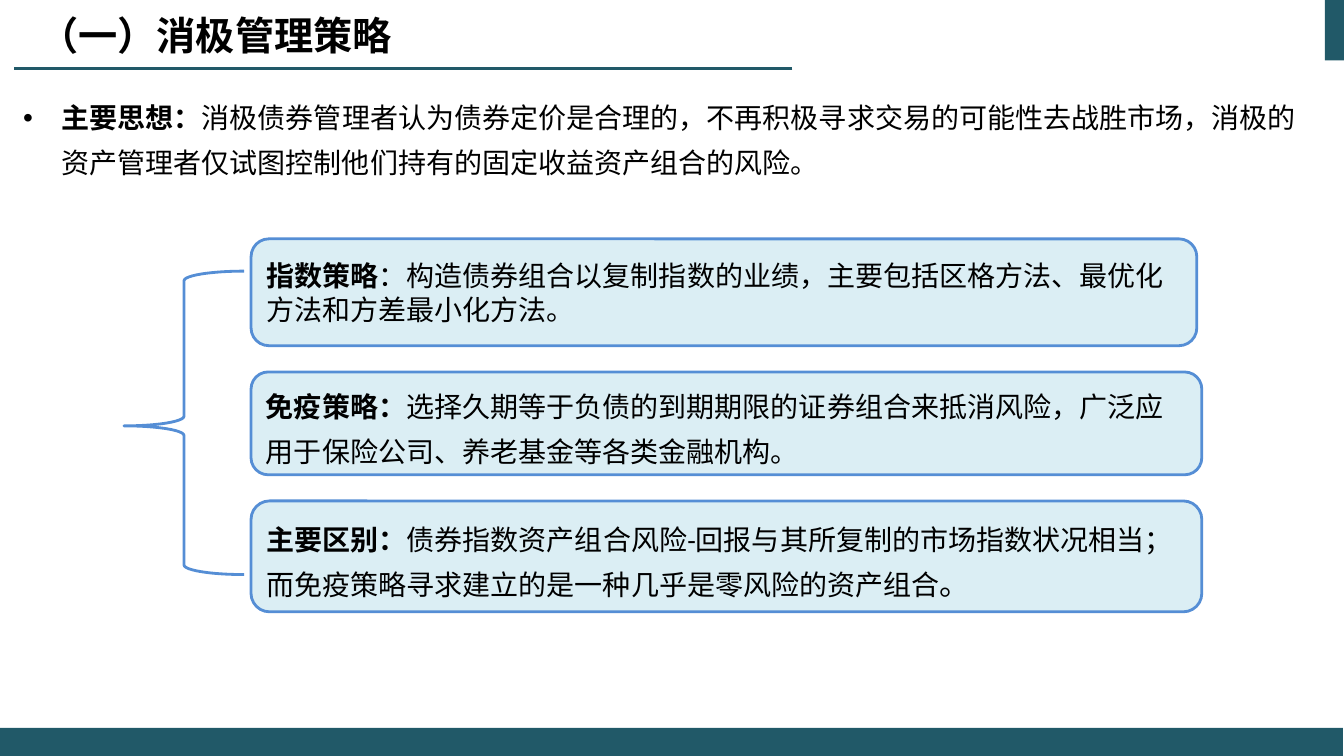
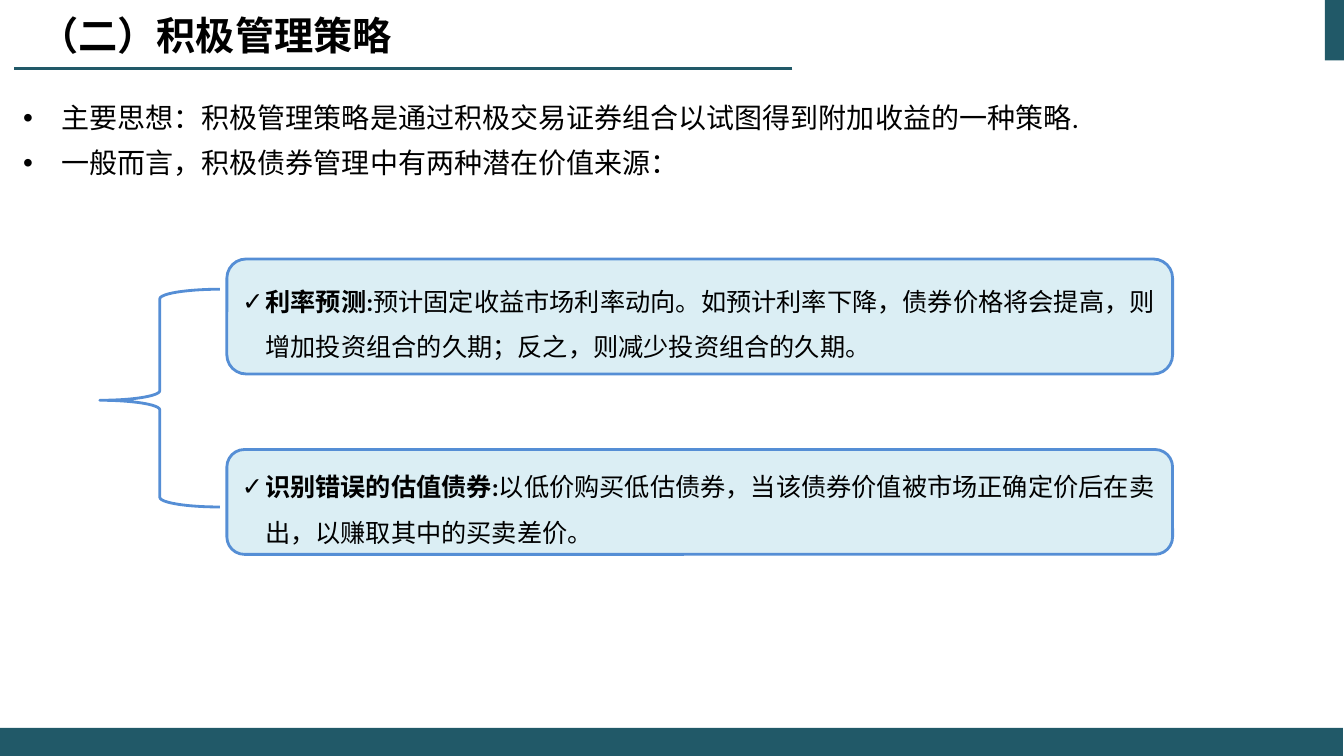
from dataclasses import dataclass

from lxml.etree import SubElement
from pptx import Presentation
from pptx.dml.color import RGBColor as RGB
from pptx.enum.shapes import MSO_CONNECTOR as CONN, MSO_SHAPE as SHP
from pptx.enum.text import MSO_ANCHOR as ANCHOR, MSO_AUTO_SIZE as AUTO, PP_ALIGN as ALIGN
from pptx.oxml.ns import qn
from pptx.util import Inches, Pt


@dataclass(frozen=True)
class Theme:
    band: RGB = RGB.from_string("215968")
    box: RGB = RGB.from_string("DBEEF4")
    edge: RGB = RGB.from_string("558ED5")
    ink: RGB = RGB.from_string("000000")
    paper: RGB = RGB.from_string("FFFFFF")
    font: str = "Calibri"
    cjk: str = "Noto Sans CJK SC"
    title: int = 28
    body: int = 20
    small: int = 18
    full_stop: int = 22


T = Theme()
EXACT = Pt(32)


def inches(*values):
    return [Inches(v) for v in values]


def place(sp, at):
    sp.left, sp.top, sp.width, sp.height = inches(*at)


def add_bullet(p, char, indent):
    pPr = p._p.get_or_add_pPr()
    pPr.set("marL", str(Inches(indent)))
    pPr.set("indent", str(-Inches(indent)))
    SubElement(pPr, qn("a:buFont")).set("typeface", "Arial")
    SubElement(pPr, qn("a:buChar")).set("char", char)


def add_run(p, text, *, size, bold=False, font=T.font):
    r = p.add_run()
    r.text = text
    r.font.size, r.font.bold, r.font.name = Pt(size), bold, font
    r.font.color.rgb = T.ink
    SubElement(r._r.get_or_add_rPr(), qn("a:ea")).set("typeface", T.cjk)


def write(tf, paragraphs, *, size=T.body, font=T.font, spacing=None,
          bullet=None, indent=0, anchor=ANCHOR.MIDDLE):
    tf.word_wrap, tf.auto_size, tf.vertical_anchor = True, AUTO.NONE, anchor
    for i, runs in enumerate(paragraphs):
        p = tf.paragraphs[0] if i == 0 else tf.add_paragraph()
        if bullet:
            add_bullet(p, bullet, indent)
        p.alignment, p.space_before = ALIGN.LEFT, Pt(0)
        if spacing:
            p.line_spacing = spacing
        for text, fmt in runs:
            add_run(p, text, **{"size": size, "font": font, **fmt})


def bold(text):
    return text, {"bold": True}


def plain(text, **fmt):
    return text, fmt


def add_shape(shapes, kind, at, fill, line=None):
    sp = shapes.add_shape(kind, *inches(*at))
    sp.shadow.inherit = False
    sp.fill.solid()
    sp.fill.fore_color.rgb = fill
    if line:
        sp.line.color.rgb, sp.line.width = line, Pt(2)
    else:
        sp.line.fill.background()
    return sp


def add_rule(shapes, start, end):
    line = shapes.add_connector(CONN.STRAIGHT, *inches(*start, *end))
    line.line.color.rgb, line.line.width = T.band, Pt(1.5)
    SubElement(line.element.spPr, qn("a:effectLst"))
    return line


def decorate_layout(layout, s):
    frame = [
        add_shape(s.shapes, SHP.RECTANGLE, (13.14, 0, 0.2, 0.6), T.band),
        add_rule(s.shapes, (7.86, 0.68), (0.14, 0.68)),
        add_shape(s.shapes, SHP.RECTANGLE, (0, 7.22, 13.32, 0.28), T.band),
    ]
    for i, sp in enumerate(frame):
        sp.element.xpath(".//p:cNvPr")[0].set("id", str(100 + i))
        layout.shapes.element.insert(2 + i, sp.element)
    title, body = list(layout.placeholders)[:2]
    place(title, (0.29, 0, 10.88, 0.69))
    place(body, (0.13, 0.84, 12.89, 5.58))


def fill_text(s, title, points):
    write(s.shapes.title.text_frame, [[plain(title)]], size=T.title, font=T.cjk)
    for r in s.shapes.title.text_frame.paragraphs[0].runs:
        r.font.bold = True
    write(s.placeholders[1].text_frame, points, spacing=EXACT,
          bullet="•", indent=0.38, anchor=ANCHOR.TOP)


def add_brace_diagram(s, brace_at, boxes, **fmt):
    shapes = s.shapes.add_group_shape().shapes
    brace = add_shape(shapes, SHP.LEFT_BRACE, brace_at, T.paper, T.edge)
    brace.adjustments[0], brace.adjustments[1] = 0.08, 0.51
    for at, runs, spacing in boxes:
        sp = add_shape(shapes, SHP.ROUNDED_RECTANGLE, at, T.box, T.edge)
        write(sp.text_frame, [runs], spacing=spacing, **fmt)


def passive_slide(s):
    fill_text(s, "（一）消极管理策略", [[
        bold("主要思想："),
        plain("消极债券管理者认为债券定价是合理的，不再积极寻求交易的可能性去战胜市场，"
              "消极的资产管理者仅试图控制他们持有的固定收益资产组合的风险。"),
    ]])
    add_brace_diagram(s, (1.23, 2.69, 1.19, 3.01), [
        ((2.49, 2.37, 9.38, 1.06), [
            bold("指数策略"),
            plain("：构造债券组合以复制指数的业绩，主要包括区格方法、"
                  "最优化方法和方差最小化方法。")], None),
        ((2.49, 3.69, 9.43, 1.02), [
            bold("免疫策略："),
            plain("选择久期等于负债的到期期限的证券组合来抵消风险，"
                  "广泛应用于保险公司、养老基金等各类金融机构。")], EXACT),
        ((2.49, 4.97, 9.43, 1.1), [
            bold("主要区别："),
            plain("债券指数资产组合风险-回报与其所复制的市场指数状况相当；"
                  "而免疫策略寻求建立的是一种几乎是零风险的资产组合"),
            plain("。", size=T.full_stop)], EXACT),
    ])


def active_slide(s):
    fill_text(s, "（二）积极管理策略", [
        [plain("主要思想：积极管理策略是通过积极交易证券组合以试图得到附加收益的一种策略.")],
        [plain("一般而言，积极债券管理中有两种潜在价值来源：")],
    ])
    add_brace_diagram(s, (0.99, 2.87, 1.19, 2.16), [
        ((2.25, 2.57, 9.38, 1.14), [
            bold("利率预测:"),
            plain("预计固定收益市场利率动向。如预计利率下降，债券价格将会提高，"
                  "则增加投资组合的久期；反之，则减少投资组合的久期。")], 1.5),
        ((2.25, 4.46, 9.38, 1.04), [
            bold("识别错误的估值债券:"),
            plain("以低价购买低估债券，当该债券价值被市场正确定价后在卖出，"
                  "以赚取其中的买卖差价。")], 1.5),
    ], size=T.small, bullet="✓", indent=0.23)


def main():
    prs = Presentation()
    prs.slide_width, prs.slide_height = inches(13.33, 7.5)
    layout = prs.slide_layouts[1]
    first, second = [prs.slides.add_slide(layout) for _ in range(2)]
    decorate_layout(layout, first)
    passive_slide(first)
    active_slide(second)
    prs.save("out.pptx")


if __name__ == "__main__":
    main()
